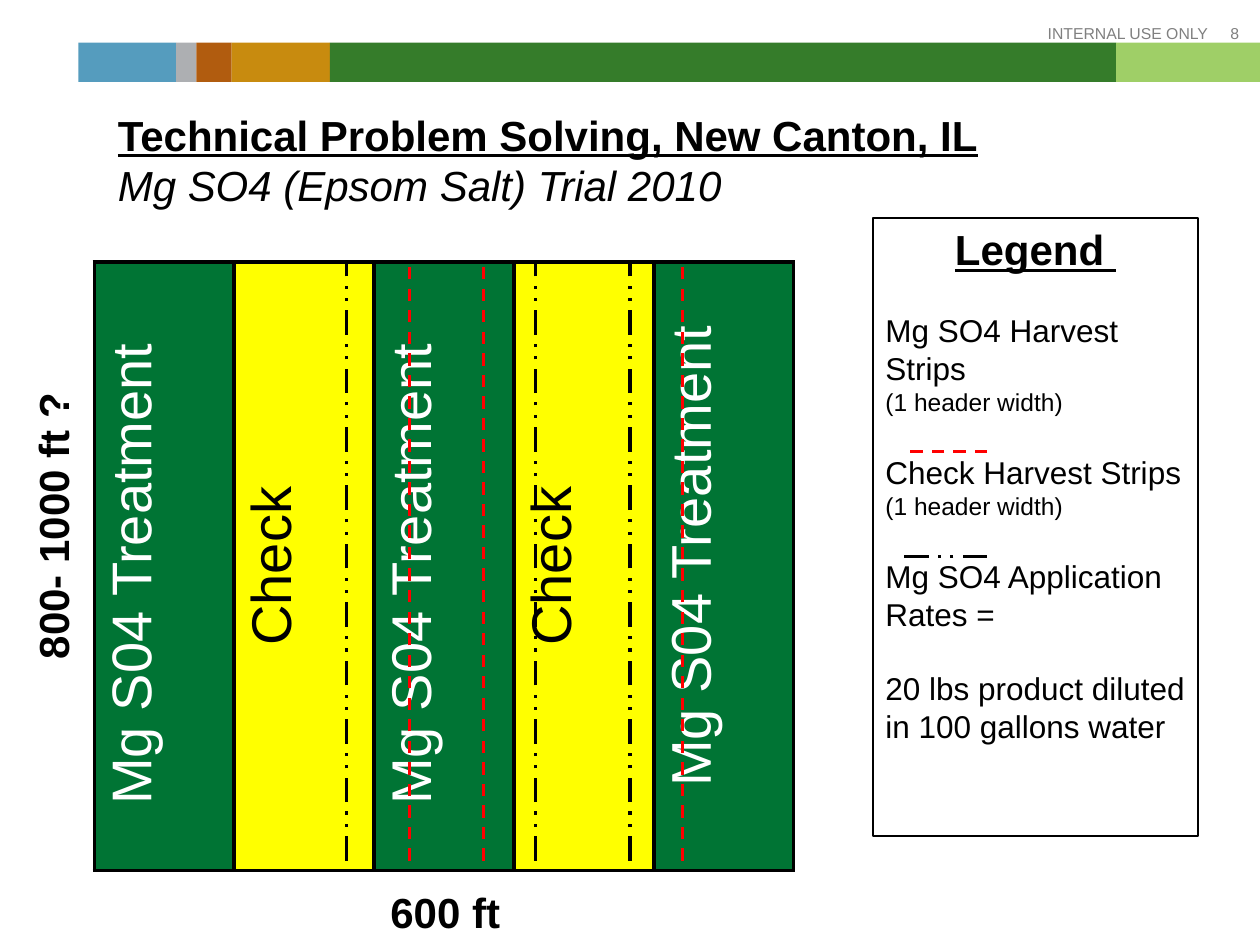
"""Build the field trial layout slide with its strip plan and legend."""
from dataclasses import dataclass

from lxml import etree
from pptx import Presentation
from pptx import util as u
from pptx.dml.color import RGBColor
from pptx.enum import dml, shapes, text
from pptx.oxml import ns


@dataclass(frozen=True)
class Theme:
    """Hold the colours, font and type sizes."""
    font: str = "Arial"
    ink: str = "000000"
    paper: str = "FFFFFF"
    muted: str = "808080"
    treatment: str = "007434"
    check: str = "FFFF00"
    harvest: str = "FF0000"
    strip: int = 32
    heading: int = 24
    body: int = 18
    note: int = 14
    footer: int = 9


THEME = Theme()
DASH = dml.MSO_LINE.DASH
DASH_DOTS = dml.MSO_LINE.DASH_DOT_DOT
CENTER = text.PP_ALIGN.CENTER
LEFT = text.PP_ALIGN.LEFT
RIGHT = text.PP_ALIGN.RIGHT
BAND = [("559CBE", 1.97), ("ADAFB2", 0.41), ("B15C0F", 0.71),
        ("C88B0F", 1.98), ("357C2A", 15.85), ("9FCF67", 2.9)]
TREATMENT = ("Mg S04 Treatment ", THEME.treatment, THEME.paper)
CHECK = ("Check", THEME.check, THEME.ink)
STRIPS = [TREATMENT, CHECK, TREATMENT, CHECK, TREATMENT]
HARVEST_LINES = [(13.76, THEME.harvest, DASH), (10.8, THEME.ink, DASH_DOTS),
                 (12.7, THEME.ink, DASH_DOTS), (9.74, THEME.harvest, DASH),
                 (8.26, THEME.harvest, DASH), (6.99, THEME.ink, DASH_DOTS)]
LEGEND = [("Mg SO4 Harvest Strips", THEME.body, True),
          ("(1 header width)", THEME.note, False),
          ("Check Harvest Strips", THEME.body, True),
          ("(1 header width)", THEME.note, False),
          ("Mg SO4 Application Rates =", THEME.body, True),
          ("20 lbs product diluted in 100 gallons water", THEME.body, True)]
LEGEND_KEYS = [(9.1, THEME.harvest, DASH), (11.22, THEME.ink, DASH_DOTS)]
TABLE_LEFT, TABLE_TOP, STRIP_WIDTH, STRIP_HEIGHT = 1.9, 5.28, 2.82, 12.27
LINE_BOTTOM = 17.35


def colour(value):
    """Return a colour object for a hex value."""
    return RGBColor.from_string(value)


def add_text(frame, words, *, size=THEME.heading, ink=THEME.ink, bold=False,
             italic=False, underline=False, align=LEFT, before=0):
    """Write one formatted paragraph, filling the first one if it is empty."""
    para = frame.paragraphs[0]
    if para.runs:
        para = frame.add_paragraph()
    para.alignment = align
    para.space_before = u.Pt(before)
    span = para.add_run()
    span.text = words
    span.font.name = THEME.font
    span.font.size = u.Pt(size)
    span.font.color.rgb = colour(ink)
    span.font.bold = bold
    span.font.italic = italic
    span.font.underline = underline


def add_label(page, words, left, top, width, height, vertical=False, **style):
    """Add a text box, optionally reading upwards."""
    frame = page.shapes.add_textbox(*map(u.Cm, (left, top, width, height))).text_frame
    frame.word_wrap = True
    if vertical:
        frame._txBody.bodyPr.set("vert", "vert270")
    add_text(frame, words, **style)


def add_box(page, left, top, width, height, fill=None, line=None):
    """Add a plain rectangle."""
    box = page.shapes.add_shape(shapes.MSO_SHAPE.RECTANGLE,
                                *map(u.Cm, (left, top, width, height)))
    box.shadow.inherit = False
    if fill:
        box.fill.solid()
        box.fill.fore_color.rgb = colour(fill)
    else:
        box.fill.background()
    if line:
        box.line.color.rgb = colour(line)
        box.line.width = u.Pt(1.25)
    else:
        box.line.fill.background()
    return box


def add_line(page, start, end, ink, dash):
    """Add a dashed straight line between two points."""
    line = page.shapes.add_connector(shapes.MSO_CONNECTOR.STRAIGHT,
                                     *map(u.Cm, (*start, *end)))
    line.line.color.rgb = colour(ink)
    line.line.width = u.Pt(1.75)
    line.line.dash_style = dash
    etree.SubElement(line._element.spPr, ns.qn("a:effectLst"))


def add_borders(cell):
    """Outline a table cell on all four sides."""
    props = cell._tc.get_or_add_tcPr()
    for index, side in enumerate(("lnL", "lnR", "lnT", "lnB")):
        edge = etree.Element(ns.qn(f"a:{side}"), w=str(u.Pt(2.25)))
        solid = etree.SubElement(edge, ns.qn("a:solidFill"))
        etree.SubElement(solid, ns.qn("a:srgbClr"), val=THEME.ink)
        props.insert(index, edge)


def add_strips(page):
    """Add the strip plan as a one-row table."""
    count = len(STRIPS)
    table = page.shapes.add_table(1, count, *map(u.Cm, (
        TABLE_LEFT, TABLE_TOP, count * STRIP_WIDTH, STRIP_HEIGHT))).table
    table.first_row = table.horz_banding = False
    for column, cell, (words, fill, ink) in zip(table.columns, table.rows[0].cells, STRIPS):
        column.width = u.Cm(STRIP_WIDTH)
        cell.fill.solid()
        cell.fill.fore_color.rgb = colour(fill)
        cell.vertical_anchor = text.MSO_ANCHOR.MIDDLE
        cell._tc.get_or_add_tcPr().set("vert", "vert270")
        add_borders(cell)
        add_text(cell.text_frame, words, size=THEME.strip, ink=ink, align=CENTER)
    table.cell(0, count - 1).margin_left = u.Cm(0.97)


def add_legend(page):
    """Add the framed legend with its line samples."""
    frame = add_box(page, 17.6, 4.39, 6.55, 12.47, line=THEME.ink).text_frame
    frame.word_wrap = True
    frame.vertical_anchor = text.MSO_ANCHOR.TOP
    add_text(frame, "Legend ", bold=True, underline=True, align=CENTER)
    for words, size, starts_group in LEGEND:
        add_text(frame, words, size=size, before=21 if starts_group else 0)
    for y, ink, dash in LEGEND_KEYS:
        add_line(page, (19.9, y), (18.2, y), ink, dash)


def add_header(page):
    """Add the colour band, the page marks and the title."""
    left = 1.58
    for fill, width in BAND:
        add_box(page, left, 0.86, width, 0.79, fill=fill)
        left += width
    for words, start, width in (("INTERNAL USE ONLY", 19, 5.6), ("8", 24, 1.23)):
        add_label(page, words, start, 0.36, width, 0.6, size=THEME.footer,
                  ink=THEME.muted, align=RIGHT)
    title = page.shapes.title
    title.left, title.top, title.width, title.height = map(u.Cm, (2.12, 2.07, 20.32, 2.31))
    frame = title.text_frame
    frame.auto_size = text.MSO_AUTO_SIZE.NONE
    frame.vertical_anchor = text.MSO_ANCHOR.TOP
    add_text(frame, "Technical Problem Solving, New Canton, IL", bold=True, underline=True)
    add_text(frame, "Mg SO4 (Epsom Salt) Trial 2010", italic=True)


def main():
    """Build and save the slide."""
    deck = Presentation()
    deck.slide_width, deck.slide_height = u.Cm(25.4), u.Cm(19.05)
    page = deck.slides.add_slide(deck.slide_layouts[5])
    add_header(page)
    add_strips(page)
    add_label(page, "600 ft", 7.62, 17.75, 3.81, 1.3, bold=True)
    for x, ink, dash in HARVEST_LINES:
        add_line(page, (x, LINE_BOTTOM), (x, TABLE_TOP), ink, dash)
    add_label(page, "800- 1000 ft ?", 0.42, 6.35, 1.56, 7.19, vertical=True, bold=True)
    add_legend(page)
    deck.save("out.pptx")


if __name__ == "__main__":
    main()
